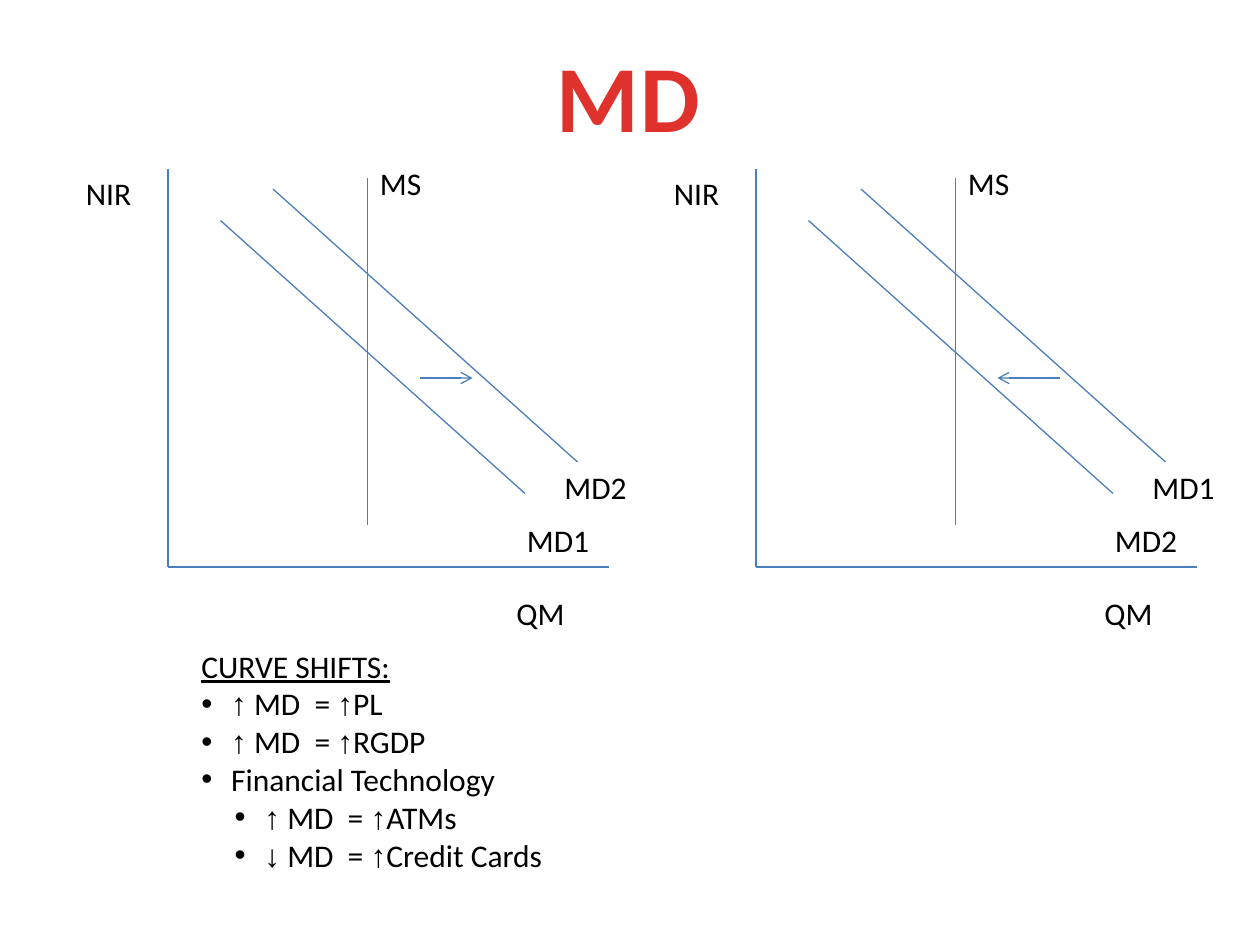
"""Build a slide on shifts in money demand."""
from dataclasses import dataclass
from typing import Any

from lxml import etree
from pptx import Presentation
from pptx.dml.color import RGBColor
from pptx.enum.shapes import MSO_CONNECTOR
from pptx.enum.text import MSO_ANCHOR, MSO_AUTO_SIZE, PP_ALIGN
from pptx.oxml.ns import qn
from pptx.util import Pt

STRAIGHT = MSO_CONNECTOR.STRAIGHT
FIT = MSO_AUTO_SIZE.SHAPE_TO_FIT_TEXT
MIDDLE = MSO_ANCHOR.MIDDLE
CENTER = PP_ALIGN.CENTER


@dataclass(frozen=True)
class Theme:
    """Hold the colours, fonts and sizes."""
    ink: RGBColor = RGBColor(0, 0, 0)
    line: RGBColor = RGBColor(0x4B, 0x7E, 0xBC)
    red: RGBColor = RGBColor(0xE0, 0x32, 0x2D)
    dark: RGBColor = RGBColor(0xA2, 0x20, 0x1C)
    font: str = "Calibri"
    sign: str = "Arial"
    body: float = 18
    head: float = 54
    rule: float = 0.75


@dataclass(frozen=True)
class Graph:
    """Describe one graph: its left shift, curve names and arrow span."""
    left: float
    inner: str
    outer: str
    start: float
    end: float


@dataclass(frozen=True)
class Label:
    """Describe a label by text and box."""
    text: str
    left: float
    top: float
    width: float


@dataclass(frozen=True)
class Item:
    """Describe a list line by level and text."""
    level: int
    text: str


THEME = Theme()
GRAPHS = (
    Graph(0, "MD1", "MD2", 240, 270),
    Graph(336, "MD2", "MD1", 270, 234),
)
LINES = (
    (96, 96.5, 96, 324),
    (96, 324, 348, 324),
    (126, 126, 300, 282),
    (156, 108, 330, 264),
    (210, 102, 210, 300),
)
ITEMS = (
    Item(0, "↑ MD  = ↑PL"),
    Item(0, "↑ MD  = ↑RGDP"),
    Item(0, "Financial Technology"),
    Item(1, "↑ MD  = ↑ATMs"),
    Item(1, "↓ MD  = ↑Credit Cards"),
)


def apply(target: Any, values: dict[str, Any]) -> None:
    """Set each named value on the target."""
    for name, value in values.items():
        setattr(target, name, value)


def add_run(para: Any, text: str, **extra: Any) -> None:
    """Add a run in the body style."""
    run = para.add_run()
    run.text = text
    apply(run.font, {"name": THEME.font, "size": Pt(THEME.body), **extra})
    run.font.color.rgb = THEME.ink


def add_signs(para: Any, text: str) -> None:
    """Add text with its arrow signs in their own font."""
    for part in text.replace("↑", "|↑|").replace("↓", "|↓|").split("|"):
        if part:
            add_run(para, part, name=THEME.sign if part in "↑↓" else THEME.font)


def add_box(slide: Any, left: float, top: float, width: float, height: float) -> Any:
    """Add a text box that does not wrap."""
    box = slide.shapes.add_textbox(Pt(left), Pt(top), Pt(width), Pt(height))
    apply(box.text_frame, {"word_wrap": False, "auto_size": FIT})
    return box.text_frame


def add_line(slide: Any, left: float, ends: tuple, arrow: bool = False) -> None:
    """Draw a line, with an arrowhead at its end if asked."""
    x1, y1, x2, y2 = ends
    line = slide.shapes.add_connector(
        STRAIGHT, Pt(left + x1), Pt(y1), Pt(left + x2), Pt(y2))
    line.line.color.rgb = THEME.line
    line.line.width = Pt(THEME.rule)
    props = line.line._get_or_add_ln()
    if arrow:
        etree.SubElement(props, qn("a:tailEnd"), type="arrow")
    etree.SubElement(line._element.spPr, qn("a:effectLst"))


def add_graph(slide: Any, graph: Graph) -> None:
    """Draw one graph with its labels and shift arrow."""
    for ends in LINES:
        add_line(slide, graph.left, ends)
    add_line(slide, 0, (graph.left + graph.start, 216, graph.left + graph.end, 216), True)
    labels = (
        Label(graph.inner, 294, 294, 50),
        Label(graph.outer, 315.5, 264, 50),
        Label("MS", 210, 90, 38),
        Label("NIR", 42, 96, 41),
        Label("QM", 288, 336, 42.5),
    )
    for label in labels:
        frame = add_box(slide, graph.left + label.left, label.top, label.width, 29)
        add_run(frame.paragraphs[0], label.text)


def add_title(slide: Any) -> None:
    """Place and style the title."""
    title = slide.shapes.title
    apply(title, {"left": Pt(310), "top": Pt(18), "width": Pt(98), "height": Pt(72.7)})
    frame = title.text_frame
    apply(frame, {"word_wrap": False, "auto_size": FIT, "vertical_anchor": MIDDLE})
    para = frame.paragraphs[0]
    para.alignment = CENTER
    run = para.add_run()
    run.text = "MD"
    apply(run.font, {"name": THEME.font, "size": Pt(THEME.head), "bold": True})
    fill = run.font.fill
    fill.gradient()
    fill.gradient_angle = 270
    for stop, place, tint in zip(
            fill.gradient_stops, (0.25, 1), (THEME.red, THEME.dark)):
        stop.position = place
        stop.color.rgb = tint
    run.font._element.set("spc", "50")


def add_list(slide: Any) -> None:
    """Add the list of curve shifts."""
    frame = add_box(slide, 108, 366, 226, 160)
    add_run(frame.paragraphs[0], "CURVE SHIFTS:", underline=True)
    for item in ITEMS:
        para = frame.add_paragraph()
        para.level = item.level
        props = para._p.get_or_add_pPr()
        apply_marks = {"marL": Pt(17 + 19 * item.level), "indent": Pt(-17)}
        for name, value in apply_marks.items():
            props.set(name, str(int(value)))
        etree.SubElement(props, qn("a:buFont"), typeface=THEME.sign)
        etree.SubElement(props, qn("a:buChar"), char="•")
        add_signs(para, item.text)


def main() -> None:
    """Build and save the slide."""
    deck = Presentation()
    apply(deck, {"slide_width": Pt(720), "slide_height": Pt(540)})
    slide = deck.slides.add_slide(deck.slide_layouts[5])
    for graph in GRAPHS:
        add_graph(slide, graph)
    add_title(slide)
    add_list(slide)
    deck.save("out.pptx")


if __name__ == "__main__":
    main()
